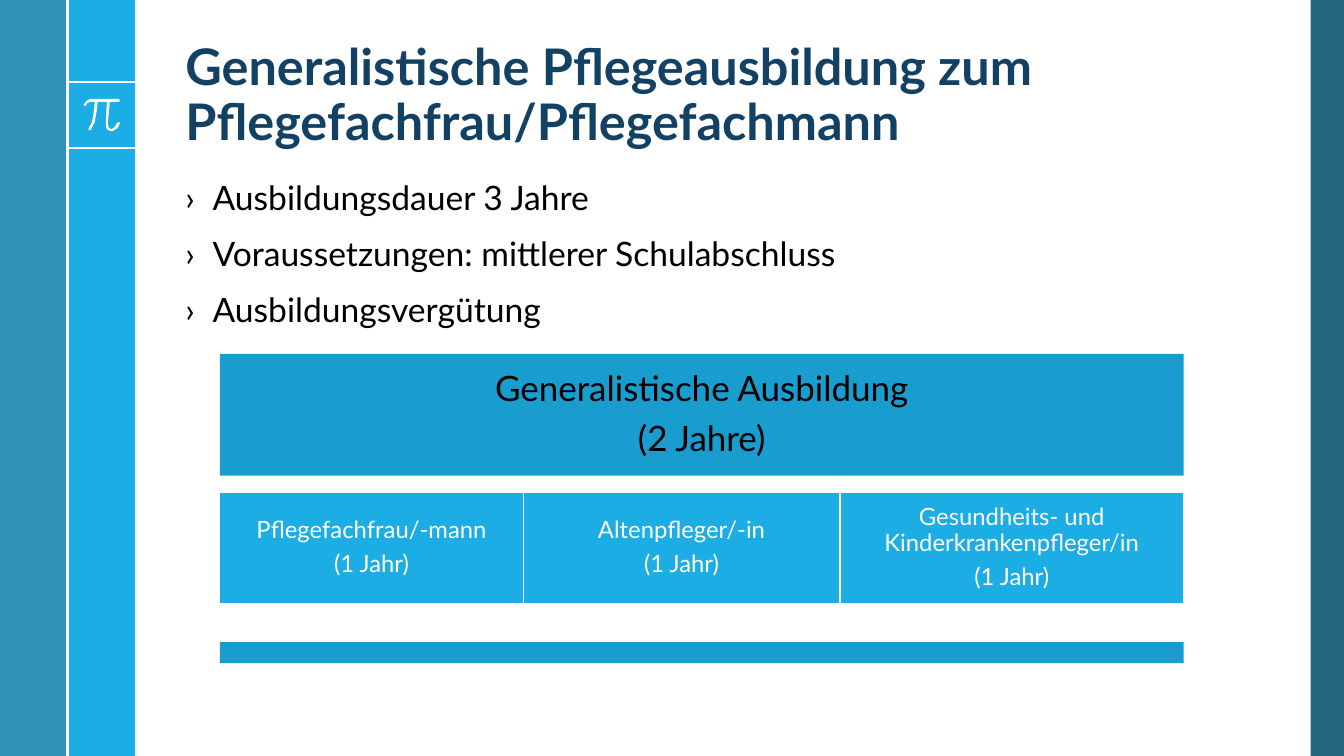
from lxml import etree
from pptx import Presentation
from pptx.dml.color import RGBColor
from pptx.enum.shapes import MSO_CONNECTOR, MSO_SHAPE
from pptx.enum.text import MSO_ANCHOR, PP_ALIGN
from pptx.oxml.ns import qn
from pptx.util import Pt

SCALE = 9144  # EMU per px, 100 px to the inch
PAGE_WIDTH, PAGE_HEIGHT = 1333, 750
FONT = "Lato"
WHITE, BLACK, NAVY = "FFFFFF", "000000", "134163"
SKY, BLUE, TEAL, PETROL = "1CADE4", "199DCF", "1482AC", "0E5772"
RECTANGLE = MSO_SHAPE.RECTANGLE
STRAIGHT = MSO_CONNECTOR.STRAIGHT
TOP, MIDDLE, BOTTOM = MSO_ANCHOR.TOP, MSO_ANCHOR.MIDDLE, MSO_ANCHOR.BOTTOM
LEFT, CENTER = PP_ALIGN.LEFT, PP_ALIGN.CENTER

CHART_LEFT, CHART_WIDTH = 218, 956
SPECIALISATIONS = [
    ("Pflegefachfrau/-mann", 301),
    ("Altenpfleger/-in", 314),
    ("Gesundheits- und Kinderkrankenpfleger/in", 341),
]
PI_OUTLINE = [
    (118, 98), (90, 98), (86, 100), (83, 104), (84, 105), (85, 105),
    (87, 102), (90, 101), (94, 101), (93, 112), (91, 122), (88, 127),
    (88, 129), (89, 129), (90, 129), (94, 121), (96, 110), (97, 101),
    (106, 101), (105, 122), (105, 126), (107, 129), (110, 130), (112, 130),
    (117, 127), (119, 122), (118, 121), (116, 122), (114, 126), (111, 128),
    (108, 127), (107, 122), (109, 101), (118, 101), (119, 100),
]


def px(length):
    return length * SCALE


def rgb(color):
    return RGBColor.from_string(color)


def paint(shape, color, outline=None, opacity=100):
    shape.shadow.inherit = False
    shape.fill.solid()
    shape.fill.fore_color.rgb = rgb(color)
    if opacity < 100:
        tint = shape.fill._xPr.find(qn("a:solidFill"))[0]
        etree.SubElement(tint, qn("a:alpha"), val=str(opacity * 1000))
    if outline:
        shape.line.color.rgb = rgb(outline)
        shape.line.width = Pt(1)
    else:
        shape.line.fill.background()


def add_block(page, left, top, width, height, color, **style):
    block = page.shapes.add_shape(RECTANGLE, px(left), px(top), px(width), px(height))
    paint(block, color, **style)
    return block


def add_white_line(page, x1, y1, x2, y2):
    line = page.shapes.add_connector(STRAIGHT, px(x1), px(y1), px(x2), px(y2))
    line.line.color.rgb = rgb(WHITE)
    line.line.width = Pt(1.5)
    etree.SubElement(line._element.spPr, qn("a:effectLst"))


def add_bullet(para):
    properties = para._p.get_or_add_pPr()
    properties.set("marL", str(px(27)))
    properties.set("indent", str(px(-27)))
    etree.SubElement(properties, qn("a:buFont"), typeface=FONT)
    etree.SubElement(properties, qn("a:buChar"), char="›")


def write(box, lines, size, color, anchor=TOP, align=LEFT, bold=False,
          bullets=False, before=0, after=0, inset=None):
    """Fill a shape or text box with one paragraph per line."""
    frame = box.text_frame
    frame.word_wrap = True
    frame.vertical_anchor = anchor
    if inset is not None:
        frame.margin_left = frame.margin_right = px(inset)
        frame.margin_top = frame.margin_bottom = px(inset)
    for index, text in enumerate(lines):
        para = frame.add_paragraph() if index else frame.paragraphs[0]
        para.text = text
        para.alignment = align
        para.line_spacing = 0.9
        para.space_before = Pt(before if index else 0)
        para.space_after = Pt(after)
        if bullets:
            add_bullet(para)
        para.font.name = FONT
        para.font.size = Pt(size)
        para.font.bold = bold
        para.font.color.rgb = rgb(color)


def add_text(page, left, top, width, height, lines, size, color, **style):
    box = page.shapes.add_textbox(px(left), px(top), px(width), px(height))
    write(box, lines, size, color, **style)


def add_pi(page):
    builder = page.shapes.build_freeform(*PI_OUTLINE[0], scale=SCALE)
    builder.add_line_segments(PI_OUTLINE[1:], close=True)
    paint(builder.convert_to_shape(), WHITE)


def add_side_bands(page):
    add_block(page, 1300, 0, 33, PAGE_HEIGHT, PETROL, opacity=90)
    add_block(page, 67, 0, 67, PAGE_HEIGHT, SKY)
    add_block(page, 0, 0, 67, PAGE_HEIGHT, TEAL, opacity=88)
    for y in (81, 147):
        add_white_line(page, 67, y, 134, y)
    add_pi(page)
    add_white_line(page, 67, 0, 67, PAGE_HEIGHT)


def add_training_chart(page):
    header = add_block(page, CHART_LEFT, 351, CHART_WIDTH, 121, BLUE)
    write(header, ["Generalistische Ausbildung", "(2 Jahre)"], 25, BLACK,
          anchor=MIDDLE, align=CENTER, after=8.75, inset=10)
    left = CHART_LEFT
    for name, width in SPECIALISATIONS:
        block = add_block(page, left, 488, width, 111, SKY, outline=WHITE)
        write(block, [name, "(1 Jahr)"], 17, WHITE,
              anchor=MIDDLE, align=CENTER, after=5.95, inset=7)
        left += width
    add_block(page, CHART_LEFT, 637, CHART_WIDTH, 21, BLUE)


def main():
    deck = Presentation()
    deck.slide_width, deck.slide_height = px(PAGE_WIDTH), px(PAGE_HEIGHT)
    page = deck.slides.add_slide(deck.slide_layouts[6])
    add_side_bands(page)
    add_text(page, 174, 19, 1070, 136,
             ["Generalistische Pflegeausbildung zum Pflegefachfrau/Pflegefachmann"],
             36, NAVY, anchor=BOTTOM, bold=True)
    add_text(page, 174, 175, 1070, 500,
             ["Ausbildungsdauer 3 Jahre",
              "Voraussetzungen: mittlerer Schulabschluss",
              "Ausbildungsvergütung"],
             24, BLACK, bullets=True, before=14)
    add_training_chart(page)
    deck.save("out.pptx")


if __name__ == "__main__":
    main()
